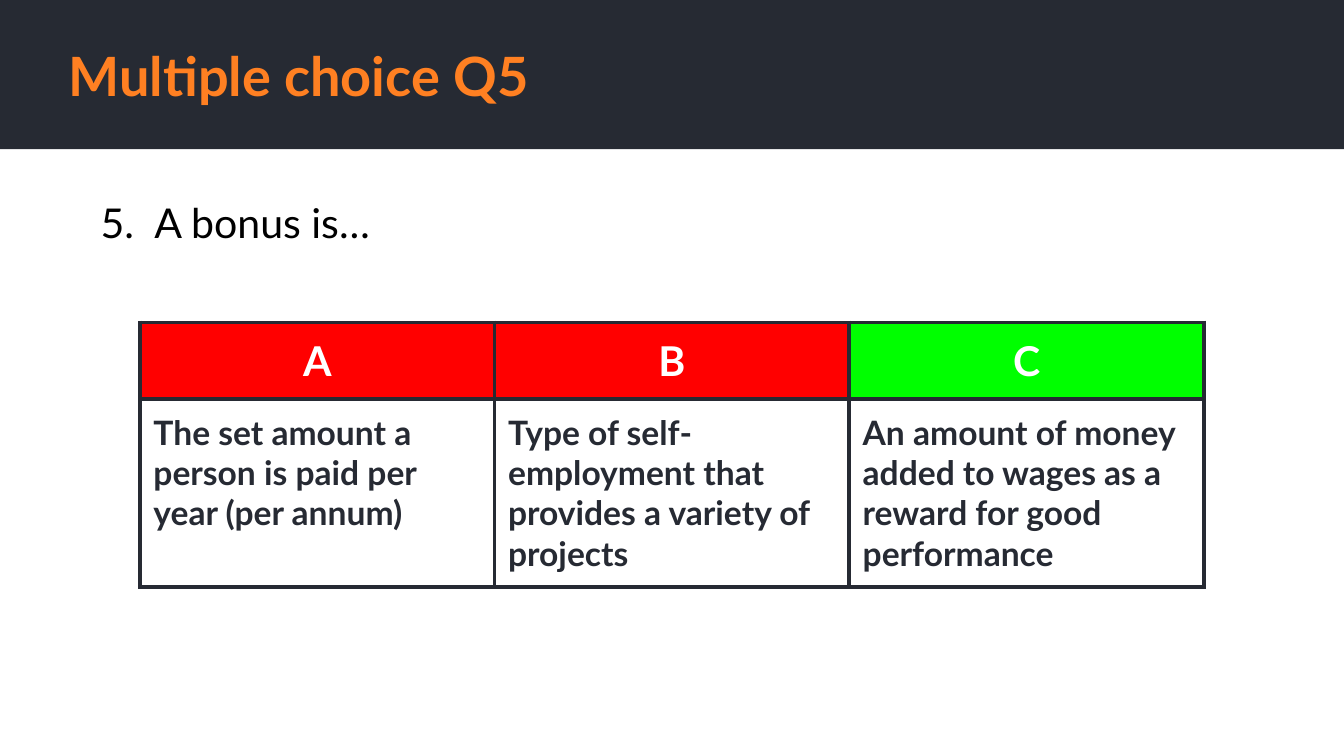
from lxml import etree
from pptx import Presentation
from pptx.dml.color import RGBColor
from pptx.enum.shapes import MSO_SHAPE
from pptx.enum.text import MSO_ANCHOR, MSO_AUTO_SIZE, PP_ALIGN
from pptx.oxml.ns import qn
from pptx.util import Pt

RECT = MSO_SHAPE.RECTANGLE
TOP, MIDDLE = MSO_ANCHOR.TOP, MSO_ANCHOR.MIDDLE
NO_FIT, GROW = MSO_AUTO_SIZE.NONE, MSO_AUTO_SIZE.SHAPE_TO_FIT_TEXT
LEFT, CENTER = PP_ALIGN.LEFT, PP_ALIGN.CENTER

FONT = "Lato"
DARK, ORANGE, WHITE, BLACK = "262A33", "FF8022", "FFFFFF", "000000"
RED, GREEN = "FF0000", "00FF00"
INSET = Pt(7.2)

ANSWERS = [
    ("A", "The set amount a person is paid per year (per annum)", RED),
    ("B", "Type of self-employment that provides a variety of projects", RED),
    ("C", "An amount of money added to wages as a reward for good performance", GREEN),
]


def rgb(code):
    return RGBColor.from_string(code)


def paint(item, color):
    item.fill.solid()
    item.fill.fore_color.rgb = rgb(color)


def pad(item):
    item.margin_left = item.margin_right = INSET
    item.margin_top = item.margin_bottom = INSET


def write(para, text, size, color, bold=False, align=LEFT):
    para.alignment = align
    run = para.add_run()
    run.text = text
    run.font.name = FONT
    run.font.size = Pt(size)
    run.font.bold = bold
    run.font.color.rgb = rgb(color)


def place(shape, box):
    shape.left, shape.top, shape.width, shape.height = map(Pt, box)


def set_frame(frame, anchor, fit):
    pad(frame)
    frame.word_wrap = True
    frame.auto_size = fit
    frame.vertical_anchor = anchor


def add_header(slide, box, text):
    left, top, width, height = box
    band = slide.shapes.add_shape(RECT, *map(Pt, box))
    band.shadow.inherit = False
    paint(band, DARK)
    band.line.fill.background()
    title = slide.shapes.title
    title.element.addprevious(band.element)
    place(title, (left + 29.5, top + 20, width - 90.5, height - 39.5))
    set_frame(title.text_frame, MIDDLE, NO_FIT)
    write(title.text_frame.paragraphs[0], text, 29, ORANGE, True)


def number(para, start):
    props = para._p.get_or_add_pPr()
    props.set("marL", str(Pt(36)))
    props.set("indent", str(-Pt(28.8)))
    tint = etree.SubElement(props, qn("a:buClr"))
    etree.SubElement(tint, qn("a:srgbClr"), val=BLACK)
    etree.SubElement(props, qn("a:buFont"), typeface=FONT)
    etree.SubElement(props, qn("a:buAutoNum"), type="arabicPeriod", startAt=str(start))


def add_question(slide, box, text, start):
    frame = slide.shapes.add_textbox(*map(Pt, box)).text_frame
    set_frame(frame, TOP, GROW)
    para = frame.paragraphs[0]
    number(para, start)
    para.font.size = Pt(22)
    write(para, text, 22, BLACK)


def add_border(cell):
    props = cell._tc.get_or_add_tcPr()
    for side in ("lnL", "lnR", "lnT", "lnB"):
        line = etree.SubElement(props, qn("a:" + side), w=str(Pt(2.25)))
        fill = etree.SubElement(line, qn("a:solidFill"))
        etree.SubElement(fill, qn("a:srgbClr"), val=DARK)


def add_answers(slide, box, answers):
    table = slide.shapes.add_table(2, len(answers), *map(Pt, box)).table
    table.horz_banding = False
    head = 40.6
    table.rows[0].height = Pt(head)
    table.rows[1].height = Pt(box[3] - head)
    for col, (letter, text, color) in enumerate(answers):
        top, body = table.cell(0, col), table.cell(1, col)
        for cell in (top, body):
            pad(cell)
            add_border(cell)
        paint(top, color)
        body.fill.background()
        write(top.text_frame.paragraphs[0], letter, 22, WHITE, True, CENTER)
        write(body.text_frame.paragraphs[0], text, 18, DARK, True)


def main():
    deck = Presentation()
    deck.slide_width, deck.slide_height = Pt(720), Pt(405)
    slide = deck.slides.add_slide(deck.slide_layouts[5])
    add_header(slide, (0, 0, 720, 80), "Multiple choice Q5")
    add_question(slide, (39.6, 98.6, 646.6, 41), "A bonus is…", 5)
    add_answers(slide, (75, 172.8, 570, 141.2), ANSWERS)
    deck.save("out.pptx")


if __name__ == "__main__":
    main()
